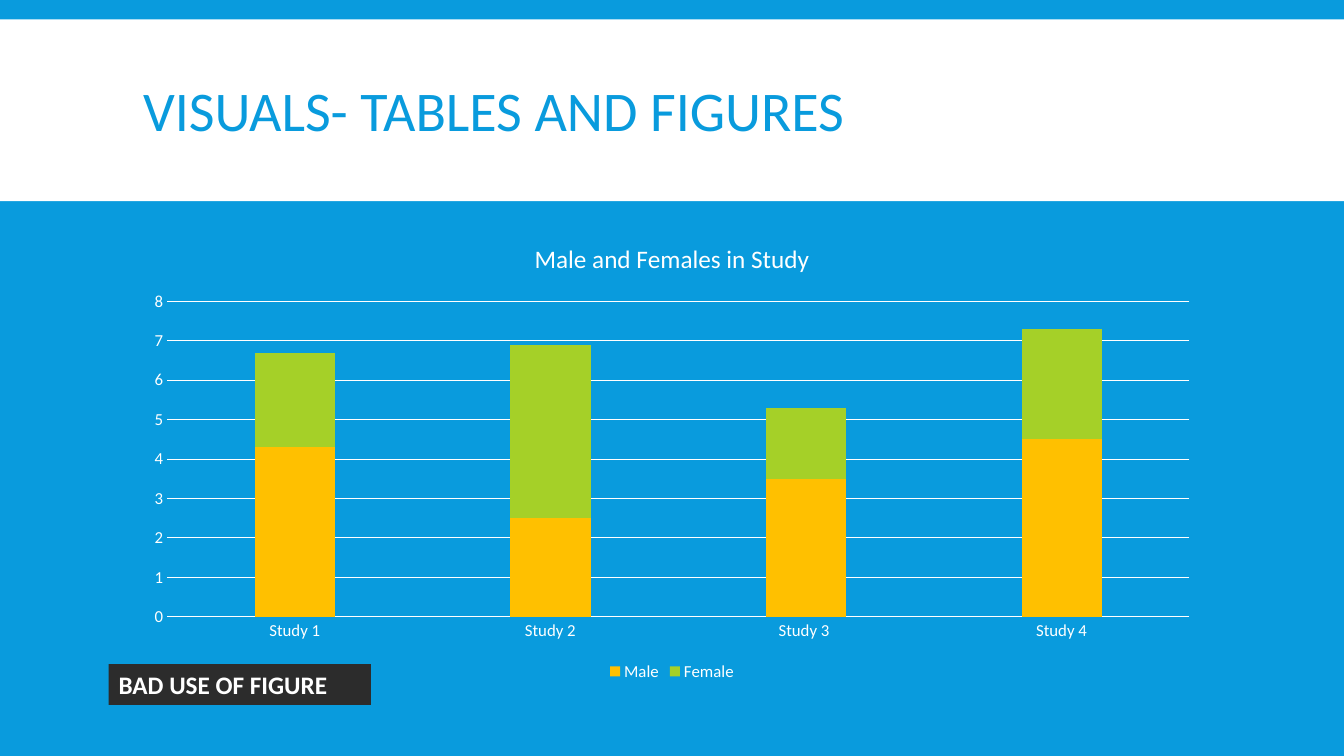
from pptx import Presentation
from pptx.chart.data import CategoryChartData
from pptx.dml.color import RGBColor
from pptx.enum.chart import XL_CHART_TYPE, XL_LEGEND_POSITION, XL_TICK_MARK
from pptx.enum.shapes import MSO_SHAPE
from pptx.enum.text import MSO_ANCHOR, PP_ALIGN
from pptx.util import Pt

RECT = MSO_SHAPE.RECTANGLE
STACKED = XL_CHART_TYPE.COLUMN_STACKED
BOTTOM = XL_LEGEND_POSITION.BOTTOM
NO_TICK = XL_TICK_MARK.NONE
MIDDLE = MSO_ANCHOR.MIDDLE
LEFT = PP_ALIGN.LEFT
CENTER = PP_ALIGN.CENTER

FONT = "Calibri"
COLORS = {
    "blue": "099BDD",
    "white": "FFFFFF",
    "dark": "2C2C2C",
    "male": "FFC000",
    "female": "A5D028",
}
RGB = {name: RGBColor.from_string(code) for name, code in COLORS.items()}


def write(frame, text, size=18, color="white", bold=False, align=LEFT, spacing=1.0):
    par = frame.paragraphs[0]
    par.alignment = align
    par.line_spacing = spacing
    run = par.add_run()
    run.text = text
    style(run.font, size, color, bold)


def style(font, size, color="white", bold=False):
    font.name = FONT
    font.size = Pt(size)
    font.bold = bold
    font.color.rgb = RGB[color]


deck = Presentation()
deck.slide_width, deck.slide_height = Pt(960), Pt(540)
slide = deck.slides.add_slide(deck.slide_layouts[5])
slide.background.fill.solid()
slide.background.fill.fore_color.rgb = RGB["blue"]

boxes = []
for left, top, width, height, color in (
    (0, 13.8, 960, 129.8, "white"),
    (77.6, 474.4, 187.4, 29.08, "dark"),
):
    box = slide.shapes.add_shape(RECT, Pt(left), Pt(top), Pt(width), Pt(height))
    box.shadow.inherit = False
    box.fill.solid()
    box.fill.fore_color.rgb = RGB[color]
    box.line.fill.background()
    boxes.append(box)
band, label = boxes

title = slide.shapes.title
title.left, title.top, title.width, title.height = Pt(95), Pt(22.4), Pt(770), Pt(118.6)
title.text_frame.vertical_anchor = MIDDLE
title.text_frame.word_wrap = True
write(title.text_frame, "VISUALS- TABLES AND FIGURES", size=40, color="blue", spacing=0.85)
band.element.addnext(title.element)

data = CategoryChartData()
data.categories = ["Study 1", "Study 2", "Study 3 ", "Study 4"]
data.add_series("Male", (4.3, 2.5, 3.5, 4.5))
data.add_series("Female", (2.4, 4.4, 1.8, 2.8))
plate = slide.shapes.add_chart(STACKED, Pt(95), Pt(158.4), Pt(770), Pt(331.2), data)
title.element.addnext(plate.element)
chart = plate.chart
style(chart.font, 12)
chart.has_title = True
write(chart.chart_title.text_frame, "Male and Females in Study", align=CENTER)
chart.chart_title.include_in_layout = False
chart.has_legend = True
chart.legend.position = BOTTOM
chart.legend.include_in_layout = False
style(chart.legend.font, 12)

plot = chart.plots[0]
plot.gap_width = 219
plot.overlap = 100
plot.vary_by_categories = False
for series, color in zip(plot.series, ("male", "female")):
    series.format.fill.solid()
    series.format.fill.fore_color.rgb = RGB[color]

cats, vals = chart.category_axis, chart.value_axis
for axis in (cats, vals):
    axis.major_tick_mark = NO_TICK
    axis.minor_tick_mark = NO_TICK
    style(axis.tick_labels.font, 12)
vals.minimum_scale, vals.maximum_scale, vals.major_unit = 0, 8, 1
vals.has_major_gridlines = True
vals.format.line.fill.background()
for line in (cats.format.line, vals.major_gridlines.format.line):
    line.color.rgb = RGB["white"]
    line.width = Pt(0.75)

label.text_frame.word_wrap = True
label.text_frame.vertical_anchor = MIDDLE
write(label.text_frame, "BAD USE OF FIGURE", bold=True)

deck.save("out.pptx")
